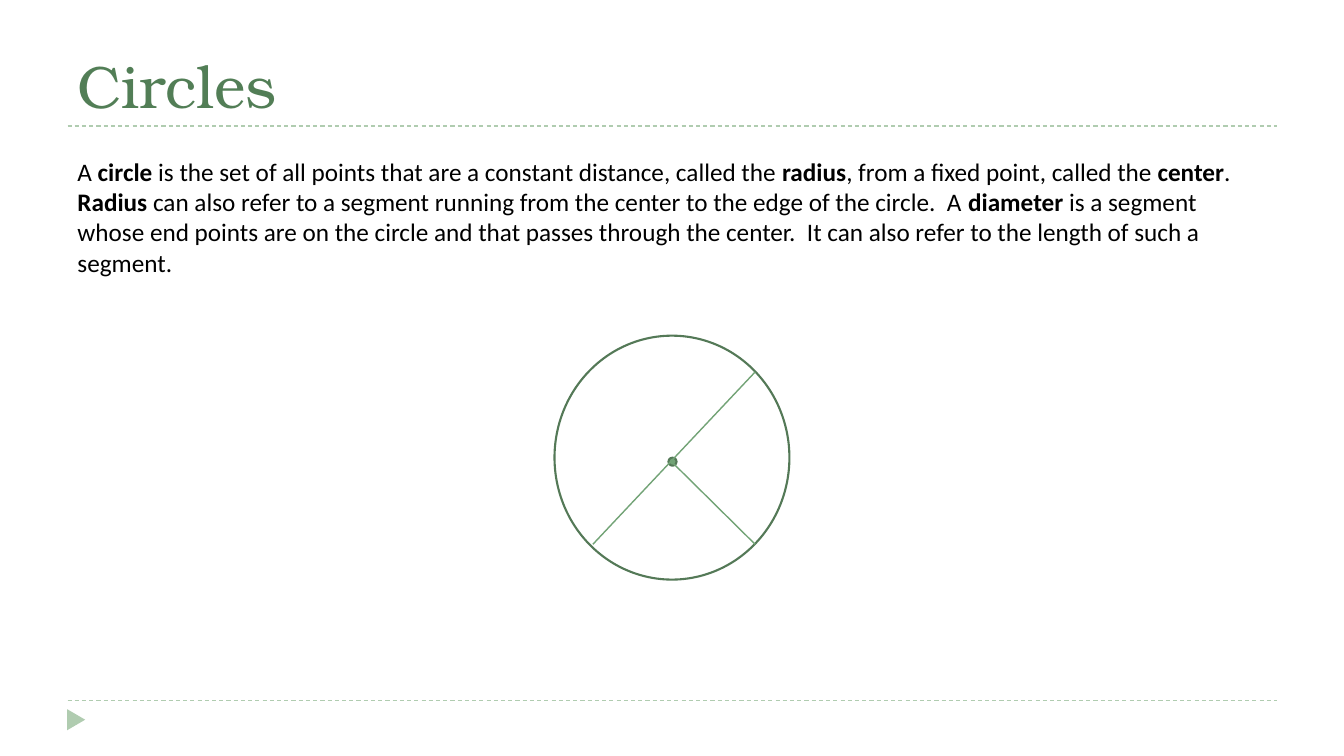
from dataclasses import dataclass

from lxml import etree
from pptx import Presentation
from pptx.dml.color import RGBColor
from pptx.enum.dml import MSO_LINE
from pptx.enum.shapes import MSO_CONNECTOR, MSO_SHAPE
from pptx.enum.text import MSO_ANCHOR, MSO_AUTO_SIZE, PP_ALIGN
from pptx.oxml.ns import qn
from pptx.util import Inches, Pt

STRAIGHT = MSO_CONNECTOR.STRAIGHT
OVAL, TRIANGLE = MSO_SHAPE.OVAL, MSO_SHAPE.ISOSCELES_TRIANGLE
DASH = MSO_LINE.DASH
BOTTOM, TOP = MSO_ANCHOR.BOTTOM, MSO_ANCHOR.TOP
LEFT = PP_ALIGN.LEFT
NO_FIT, GROW = MSO_AUTO_SIZE.NONE, MSO_AUTO_SIZE.SHAPE_TO_FIT_TEXT
TITLE_ONLY = 5


@dataclass(frozen=True)
class Theme:
    title_font: str = "TeX Gyre Bonum"
    body_font: str = "Calibri"
    title_size: float = 42.7
    body_size: float = 18
    title_color: str = "527E56"
    text_color: str = "000000"
    rule_color: str = "B0CCB0"
    outline_color: str = "547957"
    accent_color: str = "72A376"


def rgb(color):
    return RGBColor.from_string(color)


class SlideBuilder:
    def __init__(self, deck, theme):
        self.theme = theme
        self.page = deck.slides.add_slide(deck.slide_layouts[TITLE_ONLY])

    def add_span(self, para, text, font, size, color, bold=False):
        span = para.add_run()
        span.text = text
        span.font.name = font
        span.font.size = Pt(size)
        span.font.bold = bold
        span.font.color.rgb = rgb(color)

    def title(self, text, left, top, width, height):
        box = self.page.shapes.title
        box.left, box.top = Inches(left), Inches(top)
        box.width, box.height = Inches(width), Inches(height)
        frame = box.text_frame
        frame.vertical_anchor = BOTTOM
        frame.auto_size = NO_FIT
        para = frame.paragraphs[0]
        para.alignment = LEFT
        theme = self.theme
        self.add_span(para, text, theme.title_font, theme.title_size, theme.title_color)

    def paragraph(self, spans, left, top, width, height):
        box = self.page.shapes.add_textbox(
            Inches(left), Inches(top), Inches(width), Inches(height))
        frame = box.text_frame
        frame.word_wrap = True
        frame.vertical_anchor = TOP
        frame.auto_size = GROW
        theme = self.theme
        for text, bold in spans:
            self.add_span(frame.paragraphs[0], text, theme.body_font,
                          theme.body_size, theme.text_color, bold)

    def shape(self, kind, left, top, width, height, fill=None, outline=None, rotation=0):
        shape = self.page.shapes.add_shape(
            kind, Inches(left), Inches(top), Inches(width), Inches(height))
        shape.shadow.inherit = False
        shape.rotation = rotation
        if fill:
            shape.fill.solid()
            shape.fill.fore_color.rgb = rgb(fill)
        else:
            shape.fill.background()
        if outline:
            shape.line.color.rgb = rgb(outline)
            shape.line.width = Pt(1.5)
        else:
            shape.line.fill.background()

    def line(self, start, end, color, width, dash=None):
        line = self.page.shapes.add_connector(
            STRAIGHT, *(Inches(value) for value in (*start, *end)))
        line.line.color.rgb = rgb(color)
        line.line.width = Pt(width)
        if dash:
            line.line.dash_style = dash
        etree.SubElement(line._element.spPr, qn("a:effectLst"))


def main():
    deck = Presentation()
    deck.slide_width, deck.slide_height = Inches(13.33), Inches(7.5)
    theme = Theme()
    slide = SlideBuilder(deck, theme)
    margin, content_width = 0.67, 12

    # Dashed rules and corner marker
    for rule_top in (6.95, 1.25):
        slide.line((margin, rule_top), (margin + content_width, rule_top),
                   theme.rule_color, 0.75, DASH)
    slide.shape(TRIANGLE, 0.65, 7.05, 0.21, 0.18, fill=theme.rule_color, rotation=90)

    # Title and definition
    slide.title("Circles", margin, 0.17, content_width, 1.08)
    definition = [
        ("A ", False),
        ("circle", True),
        (" is the set of all points that are a constant distance, called the ", False),
        ("radius", True),
        (", from a fixed point, called the ", False),
        ("center", True),
        (".  ", False),
        ("Radius", True),
        (" can also refer to a segment running from the center to the edge of the "
         "circle.  A ", False),
        ("diameter", True),
        (" is a segment whose end points are on the circle and that passes through "
         "the center.  It can also refer to the length of such a segment.", False),
    ]
    slide.paragraph(definition, margin, 1.5, content_width, 1.31)

    # Circle with center point, radius and diameter
    slide.shape(OVAL, 5.5, 3.33, 2.33, 2.42, outline=theme.outline_color)
    slide.shape(OVAL, 6.63, 4.54, 0.08, 0.08,
                fill=theme.accent_color, outline=theme.outline_color)
    slide.line((6.65, 4.57), (7.49, 5.4), theme.accent_color, 1)
    slide.line((5.88, 5.4), (7.49, 3.69), theme.accent_color, 1)

    deck.save("out.pptx")


if __name__ == "__main__":
    main()
